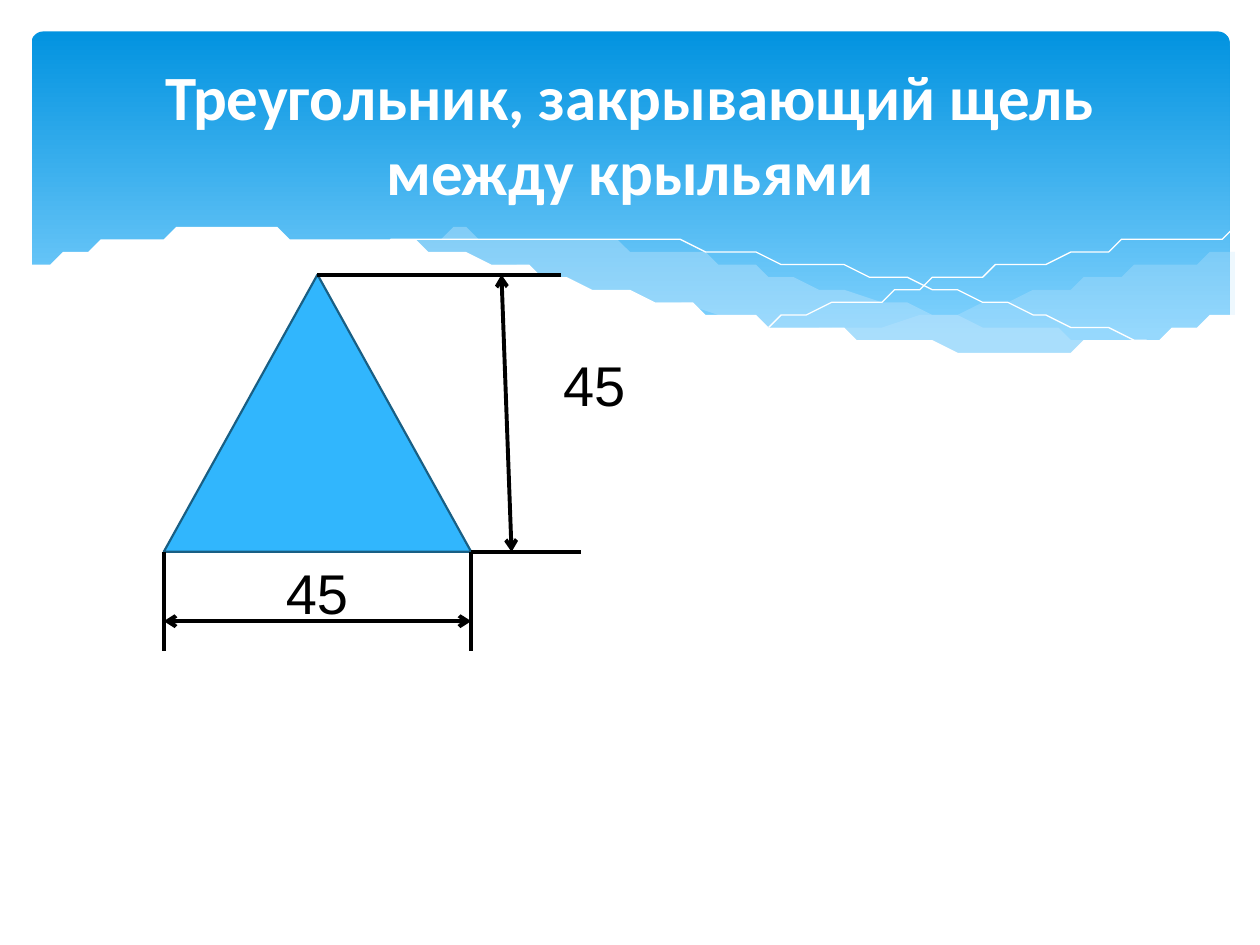
from lxml.etree import SubElement
from pptx import Presentation
from pptx.dml.color import RGBColor
from pptx.enum.shapes import MSO_CONNECTOR as Connector, MSO_SHAPE as Preset
from pptx.enum.text import MSO_ANCHOR as Anchor, MSO_AUTO_SIZE as AutoSize, PP_ALIGN as Align
from pptx.oxml.ns import qn
from pptx.util import Inches, Pt

WHITE = RGBColor(0xFF, 0xFF, 0xFF)
BLACK = RGBColor(0x00, 0x00, 0x00)
SKY_TOP = RGBColor(0x02, 0x93, 0xE0)
SKY_BOTTOM = RGBColor(0x83, 0xD3, 0xFE)
MIST = RGBColor(0xC6, 0xE7, 0xFC)
TRIANGLE_FILL = RGBColor(0x31, 0xB6, 0xFD)
TRIANGLE_EDGE = RGBColor(0x19, 0x5F, 0x84)

COLUMNS, ROWS = 100, 75
CELL = Inches(0.1)

LEFT, RIGHT, APEX, BASE = 13, 37.4, 21.8, 43.8
MIDDLE = (LEFT + RIGHT) / 2
FOOT = 51.7

RIGHT_MIST = [
    [(97.5, 20), (92.1, 21), (86.1, 22.3), (77.9, 24.2), (66.1, 26.5)],
    [(66.1, 26.5), (73.2, 27.4), (80.3, 27.8), (87.2, 27.4), (92.8, 26.3), (97.6, 24.7)],
    [(97.6, 20)],
]
LEFT_MIST = [
    [(89.3, 27.3), (83.7, 26.5), (74.1, 24.7), (62.9, 22.2), (55.5, 20.5), (48.9, 19.4),
     (42, 18.7), (36.1, 18.5), (31.3, 18.8), (28.6, 19.1)],
    [(28.6, 19.1), (36.2, 20.3), (44.9, 22.2), (56.6, 24.8), (66.5, 26.6), (74.8, 27.6),
     (81.8, 27.8), (89.3, 27.3)],
]
FALLING_LINE = [
    [(30.9, 19.5), (34.4, 19), (40.1, 18.7), (46.9, 18.9), (55.6, 19.7), (66.5, 21.3),
     (76, 23.3), (83.1, 25.1), (90.7, 27.2)],
]
RISING_LINE = [
    [(61.3, 25.7), (69.5, 23.5), (77.6, 21.6), (86.6, 19.9), (92.4, 19), (97.5, 18.5)],
]
WHITE_WAVE = [
    [(97.7, 24.6), (92, 26.5), (86.3, 27.4), (80.9, 27.7), (74.4, 27.4), (66.8, 26.5),
     (57.9, 25), (50.3, 23.3), (41.8, 21.3), (34, 19.7), (27.1, 18.8), (21.1, 18.4),
     (16.1, 18.4), (11.9, 18.7), (8.5, 19.3), (5.2, 20.1), (2.3, 21.3)],
    [(2.3, 32.9)],
    [(97.7, 32.9)],
]


def smooth(points, steps=5):
    """Return points along a Catmull-Rom curve through the given ones."""
    padded = [points[0], *points, points[-1]]
    curve = [points[0]]
    for a, b, c, d in zip(padded, padded[1:], padded[2:], padded[3:]):
        for t in (step / steps for step in range(1, steps + 1)):
            curve.append(tuple(
                (2 * q + (r - p) * t + (2 * p - 5 * q + 4 * r - s) * t**2
                 + (3 * q - p - 3 * r + s) * t**3) / 2
                for p, q, r, s in zip(a, b, c, d)))
    return curve


class SlideBuilder:
    """Draws styled elements on one slide, measured in grid cells."""

    def __init__(self, deck):
        deck.slide_width, deck.slide_height = COLUMNS * CELL, ROWS * CELL
        self.page = deck.slides.add_slide(deck.slide_layouts[5])
        self.shapes = self.page.shapes

    def cells(self, *values):
        return [round(value * CELL) for value in values]

    def paint(self, shape, fill=None, edge=None, width=0, opacity=None):
        shape.shadow.inherit = False
        if fill is None:
            shape.fill.background()
        else:
            shape.fill.solid()
            shape.fill.fore_color.rgb = fill
        if opacity is not None:
            color = shape.element.spPr.find(qn("a:solidFill"))[0]
            SubElement(color, qn("a:alpha"), val=str(opacity * 1000))
        if edge is None:
            shape.line.fill.background()
        else:
            shape.line.color.rgb = edge
            shape.line.width = Pt(width)

    def band(self, *place):
        band = self.shapes.add_shape(Preset.ROUNDED_RECTANGLE, *self.cells(*place))
        band.adjustments[0] = 0.034
        self.paint(band)
        band.fill.gradient()
        band.fill.gradient_angle = 270
        stops = zip(band.fill.gradient_stops, (SKY_TOP, SKY_BOTTOM), (0, 0.9))
        for stop, color, position in stops:
            stop.color.rgb, stop.position = color, position

    def wave(self, sections, closed=True, **style):
        points = [point for section in sections for point in smooth(section)]
        outline = self.shapes.build_freeform(*points[0], scale=CELL)
        outline.add_line_segments(points[1:], close=closed)
        self.paint(outline.convert_to_shape(), **style)

    def triangle(self, *place):
        triangle = self.shapes.add_shape(Preset.ISOSCELES_TRIANGLE, *self.cells(*place))
        self.paint(triangle, TRIANGLE_FILL, TRIANGLE_EDGE, 1.25)

    def line(self, *ends, arrows=False):
        line = self.shapes.add_connector(Connector.STRAIGHT, *self.cells(*ends))
        line.line.color.rgb = BLACK
        line.line.width = Pt(2.25)
        properties = line.element.spPr
        if arrows:
            for end in ("a:headEnd", "a:tailEnd"):
                SubElement(properties.find(qn("a:ln")), qn(end), type="arrow")
        SubElement(properties, qn("a:effectLst"))

    def put_text(self, box, text, color, frame_format, font_format, align):
        frame = box.text_frame
        for name, value in frame_format.items():
            setattr(frame, name, value)
        para = frame.paragraphs[0]
        para.alignment = align
        span = para.add_run()
        span.text = text
        span.font.color.rgb = color
        for name, value in font_format.items():
            setattr(span.font, name, value)

    def title(self, text, *place):
        title = self.shapes.title
        title.element.getparent().append(title.element)
        title.left, title.top, title.width, title.height = self.cells(*place)
        self.put_text(title, text, WHITE,
                      {"vertical_anchor": Anchor.MIDDLE, "word_wrap": True},
                      {"name": "Calibri", "size": Pt(36), "bold": True}, Align.CENTER)

    def label(self, text, left, top):
        box = self.shapes.add_textbox(*self.cells(left, top, 7.1, 6.4))
        self.put_text(box, text, BLACK,
                      {"word_wrap": True, "auto_size": AutoSize.SHAPE_TO_FIT_TEXT},
                      {"name": "Arial", "size": Pt(32)}, Align.LEFT)


def main():
    deck = Presentation()
    slide = SlideBuilder(deck)
    slide.band(2.5, 2.5, 95.1, 27)
    slide.wave(RIGHT_MIST, fill=MIST, opacity=29)
    slide.wave(LEFT_MIST, fill=MIST, opacity=40)
    for curve in (FALLING_LINE, RISING_LINE):
        slide.wave(curve, closed=False, edge=WHITE)
    slide.wave(WHITE_WAVE, fill=WHITE)
    slide.title("Треугольник, закрывающий щель между крыльями", 5, 3.7, 90, 13.7)

    slide.triangle(LEFT, APEX, RIGHT - LEFT, BASE - APEX)
    for side in (LEFT, RIGHT):
        slide.line(side, BASE, side, FOOT)
    slide.line(LEFT, 49.3, RIGHT, 49.3, arrows=True)
    slide.label("45", 21.7, BASE)
    slide.line(MIDDLE, APEX, 44.5, APEX)
    slide.line(RIGHT, BASE, 46.1, BASE)
    slide.line(39.8, APEX, 40.6, BASE, arrows=True)
    slide.label("45", 43.7, 27.3)
    deck.save("out.pptx")


if __name__ == "__main__":
    main()
